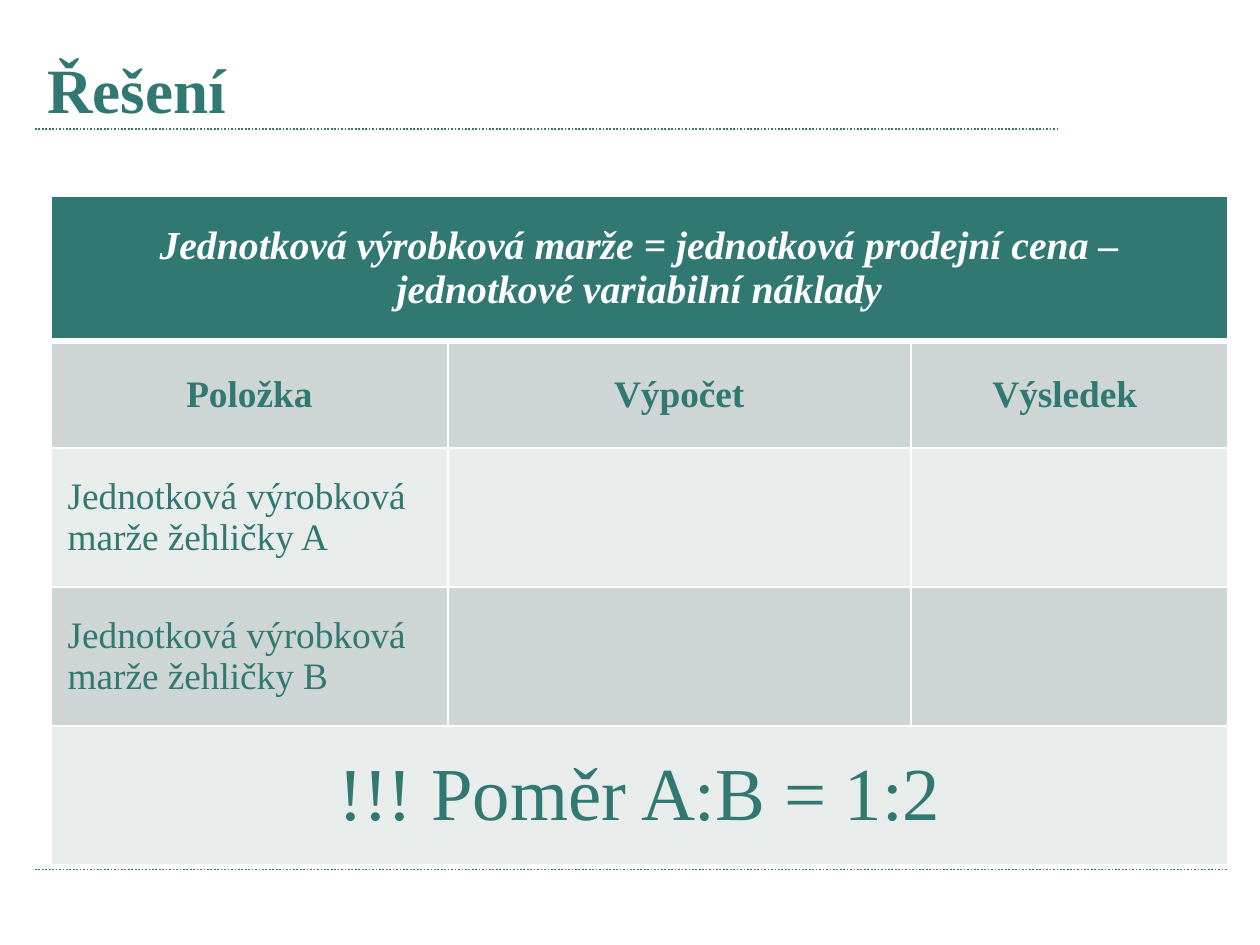
import pptx
import pptx.dml.color
import pptx.enum.dml
import pptx.enum.shapes
import pptx.enum.text
import pptx.oxml
import pptx.oxml.ns
import pptx.util
from lxml import etree

Cm = pptx.util.Cm
Align = pptx.enum.text.PP_ALIGN
Anchor = pptx.enum.text.MSO_ANCHOR
TEAL = pptx.dml.color.RGBColor(0x30, 0x78, 0x71)
WHITE = pptx.dml.color.RGBColor(0xFF, 0xFF, 0xFF)
DARK_BAND = pptx.dml.color.RGBColor(0xCD, 0xD6, 0xD5)
LIGHT_BAND = pptx.dml.color.RGBColor(0xE8, 0xEC, 0xEB)

COLUMN_WIDTHS = [6.0, 7.0, 4.8]
ROW_HEIGHTS = [2.19, 1.62, 2.1, 2.1, 2.1]
ROW_FILLS = [TEAL, DARK_BAND, LIGHT_BAND, DARK_BAND, LIGHT_BAND]
MERGED_ROWS = [0, 4]
ROWS = [
    (["Jednotková výrobková marže = jednotková prodejní cena – jednotkové variabilní náklady"],
     dict(size=17, color=WHITE, bold=True, italic=True, align=Align.CENTER)),
    (["Položka", "Výpočet", "Výsledek "], dict(size=16, bold=True, align=Align.CENTER)),
    (["Jednotková výrobková marže žehličky A"], dict(size=16)),
    (["Jednotková výrobková marže žehličky B"], dict(size=16)),
    (["!!! Poměr A:B = 1:2"], dict(size=32, align=Align.CENTER)),
]


def write(frame, text, size=16, color=TEAL, bold=False, italic=False, align=Align.LEFT):
    """Put one formatted paragraph into a text frame."""
    para = frame.paragraphs[0]
    para.alignment = align
    span = para.add_run()
    span.text = text
    font = span.font
    font.name = "Times New Roman"
    font.size = pptx.util.Pt(size)
    font.bold = bold
    font.italic = italic
    font.color.rgb = color


class SlideBuilder:
    """Hold the current slide and draw its elements in the teal style."""

    def __init__(self, deck):
        """Add a title-only slide to the deck."""
        self.page = deck.slides.add_slide(deck.slide_layouts[5])

    def title(self, text, left, top, width, height):
        """Place and format the title placeholder."""
        box = self.page.shapes.title
        box.left, box.top, box.width, box.height = Cm(left), Cm(top), Cm(width), Cm(height)
        frame = box.text_frame
        frame.auto_size = pptx.enum.text.MSO_AUTO_SIZE.NONE
        frame.vertical_anchor = Anchor.BOTTOM
        write(frame, text, size=27, bold=True)

    def rule(self, left, right, top):
        """Draw a dotted horizontal rule."""
        line = self.page.shapes.add_connector(
            pptx.enum.shapes.MSO_CONNECTOR.STRAIGHT, Cm(left), Cm(top), Cm(right), Cm(top))
        line.line.color.rgb = TEAL
        line.line.width = pptx.util.Pt(0.75)
        line.line.dash_style = pptx.enum.dml.MSO_LINE.ROUND_DOT
        etree.SubElement(line._element.spPr, pptx.oxml.ns.qn("a:effectLst"))

    def borders(self, cell, top=1, bottom=1):
        """Give a cell white borders with widths in points."""
        properties = cell._tc.get_or_add_tcPr()
        widths = {"lnL": 1, "lnR": 1, "lnT": top, "lnB": bottom}
        for index, (side, width) in enumerate(widths.items()):
            properties.insert(index, pptx.oxml.parse_xml(
                f'<a:{side} {pptx.oxml.ns.nsdecls("a")} w="{pptx.util.Pt(width)}">'
                f'<a:solidFill><a:srgbClr val="{WHITE}"/></a:solidFill></a:{side}>'))

    def table(self, left, top):
        """Build the margin table with merged first and last rows."""
        grid = self.page.shapes.add_table(
            len(ROW_HEIGHTS), len(COLUMN_WIDTHS), Cm(left), Cm(top),
            Cm(sum(COLUMN_WIDTHS)), Cm(sum(ROW_HEIGHTS))).table
        for column, width in zip(grid.columns, COLUMN_WIDTHS):
            column.width = Cm(width)
        for number, (texts, style) in enumerate(ROWS):
            row = grid.rows[number]
            row.height = Cm(ROW_HEIGHTS[number])
            for cell in row.cells:
                cell.fill.solid()
                cell.fill.fore_color.rgb = ROW_FILLS[number]
                cell.vertical_anchor = Anchor.MIDDLE
                self.borders(cell, top=3 if number == 1 else 1, bottom=3 if number == 0 else 1)
            for cell, text in zip(row.cells, texts):
                write(cell.text_frame, text, **style)
            if number in MERGED_ROWS:
                grid.cell(number, 0).merge(grid.cell(number, len(COLUMN_WIDTHS) - 1))


def main():
    """Create and save the deck."""
    deck = pptx.Presentation()
    deck.slide_width, deck.slide_height = Cm(19.05), Cm(14.28)
    slide = SlideBuilder(deck)
    slide.rule(0.53, 15.98, 1.95)
    slide.rule(0.53, 18.57, 13.14)
    slide.title("Řešení", 0.46, 0.53, 16.8, 1.5)
    slide.table(0.77, 2.96)
    deck.save("out.pptx")


if __name__ == "__main__":
    main()
